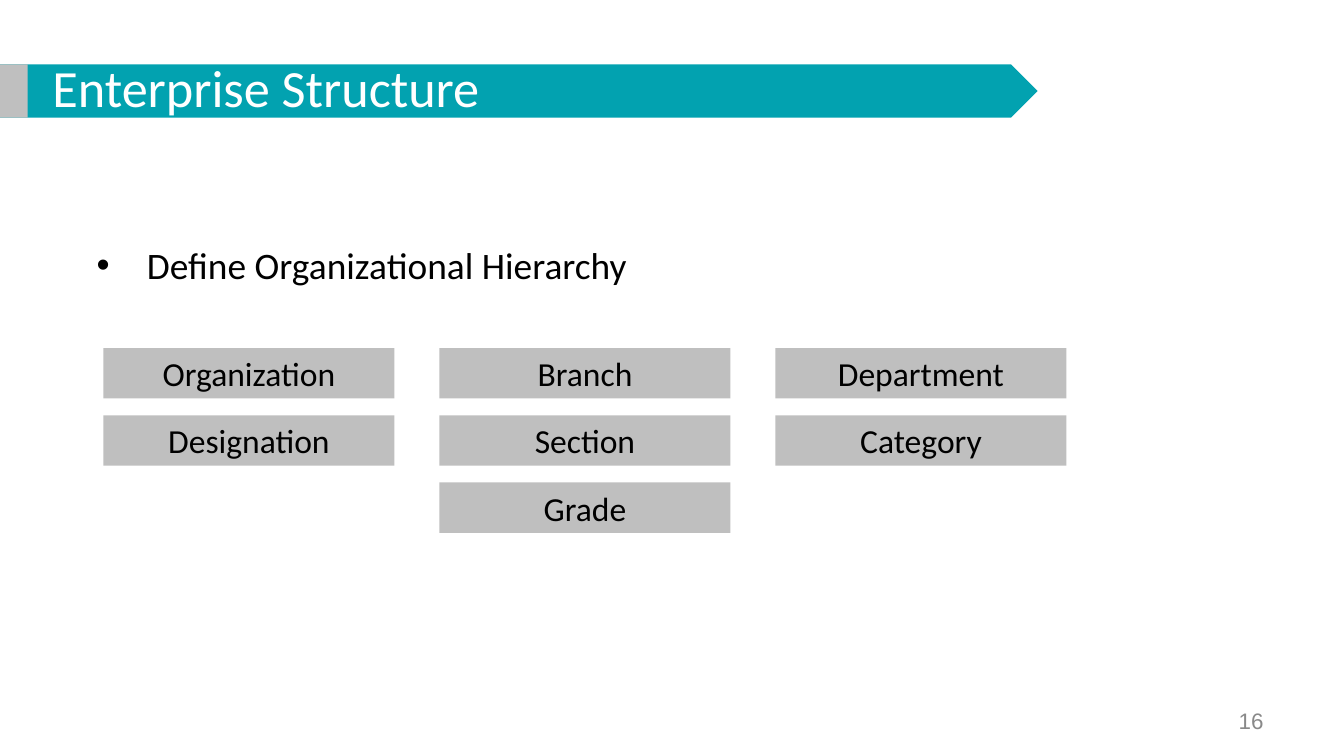
from dataclasses import dataclass

from lxml import etree
from pptx import Presentation
from pptx import util as u
from pptx.dml.color import RGBColor
from pptx.enum import shapes, text
from pptx.oxml import ns

PX = 4572


@dataclass(frozen=True)
class Theme:
    """Colours, fonts and type sizes of the deck."""
    teal: str = "02A2B0"
    grey: str = "BFBFBF"
    white: str = "FFFFFF"
    black: str = "000000"
    dim: str = "898989"
    font: str = "Calibri"
    plain: str = "Arial"
    head: int = 28
    lead: int = 20
    label: int = 18
    foot: int = 12


def px(n):
    """Turn px into EMU."""
    return u.Emu(n * PX)


def write(shape, words, size, color, font, align="LEFT", anchor="MIDDLE",
          left=0, hang=0, bullet=None, line=None):
    """Set the one paragraph of a shape and its format."""
    frame = shape.text_frame
    frame.word_wrap = True
    frame.auto_size = text.MSO_AUTO_SIZE.NONE
    frame.vertical_anchor = text.MSO_ANCHOR[anchor]
    frame.text = words
    para = frame.paragraphs[0]
    para.alignment = text.PP_ALIGN[align]
    if line:
        para.line_spacing = line
    props = para._p.get_or_add_pPr()
    props.set("marL", str(px(left)))
    props.set("indent", str(px(-hang)))
    if bullet:
        etree.SubElement(props, ns.qn("a:buFont")).set("typeface", "Arial")
        etree.SubElement(props, ns.qn("a:buChar")).set("char", bullet)
    face = para.runs[0].font
    face.name, face.size = font, u.Pt(size)
    face.color.rgb = RGBColor.from_string(color)


class Deck:
    """Holds the theme and the current slide."""

    def __init__(self, wide, high):
        """Start a deck with one title-only slide."""
        self.theme = Theme()
        self.file = Presentation()
        self.file.slide_width, self.file.slide_height = px(wide), px(high)
        self.slide = self.file.slides.add_slide(self.file.slide_layouts[5])

    def title(self, words, x, y, w, h):
        """Set the title over an arrow-ended banner."""
        t, head = self.theme, self.slide.shapes.title
        self.block(x, y, w, h, t.teal, "PENTAGON")
        head.left, head.top, head.width, head.height = map(px, (x, y, w, h))
        write(head, words, t.head, t.white, t.font, left=58, line=0.9)
        self.slide.shapes._spTree.append(head._element)

    def block(self, x, y, w, h, fill, kind="RECTANGLE"):
        """Add a flat shape without a line."""
        box = self.slide.shapes.add_shape(
            shapes.MSO_SHAPE[kind], *map(px, (x, y, w, h)))
        box.shadow.inherit = False
        box.line.fill.background()
        box.fill.solid()
        box.fill.fore_color.rgb = RGBColor.from_string(fill)
        return box

    def label(self, words, x, y, w, h):
        """Add a grey block with a centred label."""
        t = self.theme
        write(self.block(x, y, w, h, t.grey), words, t.label, t.black,
              t.font, align="CENTER")

    def point(self, words, x, y, w, h):
        """Add a bullet point at the foot of a white panel."""
        t = self.theme
        write(self.block(x, y, w, h, t.white), words, t.lead, t.black,
              t.font, anchor="BOTTOM", left=75, hang=75, bullet="•")

    def number(self, words, x, y, w, h):
        """Add the page number."""
        t = self.theme
        box = self.slide.shapes.add_textbox(*map(px, (x, y, w, h)))
        write(box, words, t.foot, t.dim, t.plain, align="RIGHT")


def main():
    """Build the slide and save it."""
    deck = Deck(2000, 1125)
    deck.title("Enterprise Structure", 0, 96, 1544, 79)
    deck.block(0, 96, 41, 79, deck.theme.grey)
    levels = [
        ("Organization", "Branch", "Department"),
        ("Designation", "Section", "Category"),
        (None, "Grade", None),
    ]
    for row, names in enumerate(levels):
        for col, name in enumerate(names):
            if name:
                deck.label(name, 154 + 500 * col, 518 + 100 * row, 433, 75)
    deck.number("16", 1433, 1043, 467, 60)
    deck.point("Define Organizational Hierarchy", 124, 250, 1834, 187)
    deck.file.save("out.pptx")


if __name__ == "__main__":
    main()
